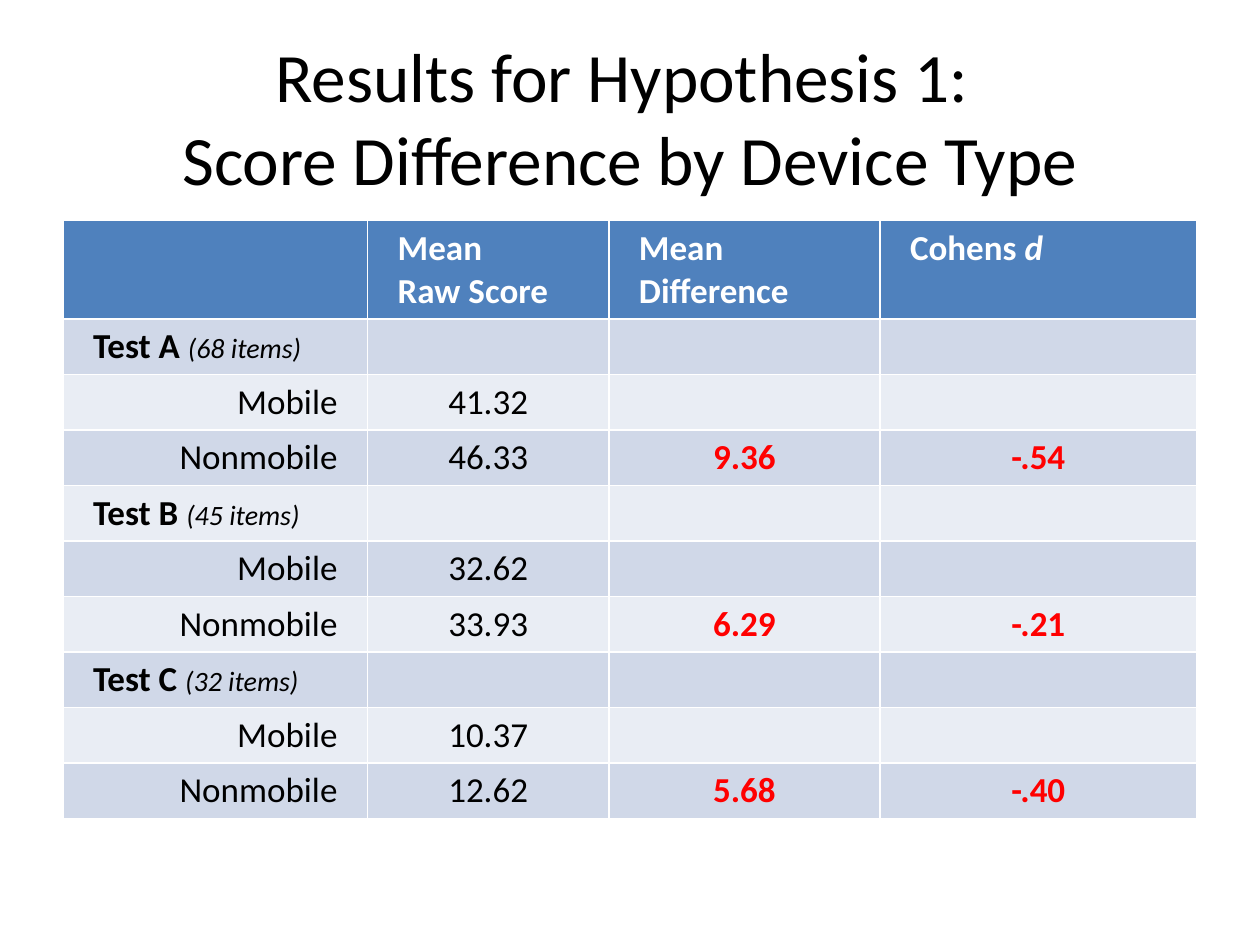
import pptx
import pptx.dml.color
import pptx.enum.text
import pptx.util

Pt = pptx.util.Pt
RGBColor = pptx.dml.color.RGBColor
ALIGN = pptx.enum.text.PP_ALIGN

BLACK = RGBColor(0x00, 0x00, 0x00)
WHITE = RGBColor(0xFF, 0xFF, 0xFF)
RED = RGBColor(0xFF, 0x00, 0x00)
HEADER_BLUE = RGBColor(0x4F, 0x81, 0xBD)
BANDS = (RGBColor(0xD0, 0xD8, 0xE8), RGBColor(0xE9, 0xED, 0xF4))

FONT = "Calibri"
COLUMN_WIDTHS = (174.1, 137.9, 154.9, 181.1)
HEADER_HEIGHT = 56
ROW_HEIGHT = 31.7

# Test name, items, mobile mean, nonmobile mean, mean difference, Cohens d
TESTS = (
    ("Test A", "(68 items)", "41.32", "46.33", "9.36", "-.54"),
    ("Test B", "(45 items)", "32.62", "33.93", "6.29", "-.21"),
    ("Test C", "(32 items)", "10.37", "12.62", "5.68", "-.40"),
)


def format_paragraph(paragraph, size, color, bold=False, align=ALIGN.LEFT):
    paragraph.alignment = align
    font = paragraph.font
    font.name, font.size, font.bold = FONT, Pt(size), bold
    font.color.rgb = color


def write_cell(cell, text, color=BLACK, bold=False, align=ALIGN.LEFT):
    cell.text = text
    for paragraph in cell.text_frame.paragraphs:
        format_paragraph(paragraph, 20, color, bold, align)


def add_italic_run(cell, text):
    run = cell.text_frame.paragraphs[0].add_run()
    run.text = text
    run.font.italic = True
    return run


def place_title(slide, left, top, width, height):
    title = slide.shapes.title
    title.left, title.top = Pt(left), Pt(top)
    title.width, title.height = Pt(width), Pt(height)
    frame = title.text_frame
    frame.text = "Results for Hypothesis 1: \vScore Difference by Device Type"
    frame.auto_size = pptx.enum.text.MSO_AUTO_SIZE.NONE
    frame.vertical_anchor = pptx.enum.text.MSO_ANCHOR.MIDDLE
    format_paragraph(frame.paragraphs[0], 39.6, BLACK, align=ALIGN.CENTER)


def fill_test(table, first_row, test):
    """Write one test: a heading row, then mobile and nonmobile rows."""
    name, items, mobile, nonmobile, difference, effect = test
    heading = table.cell(first_row, 0)
    write_cell(heading, name + " ", bold=True)
    run = add_italic_run(heading, items)
    run.font.size, run.font.bold = Pt(16), False

    devices = (("Mobile", mobile), ("Nonmobile", nonmobile))
    for row, (device, mean) in enumerate(devices, first_row + 1):
        write_cell(table.cell(row, 0), device, align=ALIGN.RIGHT)
        write_cell(table.cell(row, 1), mean, align=ALIGN.CENTER)
    for column, value in enumerate((difference, effect), 2):
        write_cell(table.cell(first_row + 2, column), value, RED, True, ALIGN.CENTER)


def add_results_table(slide, left, top, width):
    row_count = 1 + 3 * len(TESTS)
    height = HEADER_HEIGHT + ROW_HEIGHT * (row_count - 1)
    table = slide.shapes.add_table(
        row_count, len(COLUMN_WIDTHS), Pt(left), Pt(top), Pt(width), Pt(height)
    ).table
    for column, column_width in zip(table.columns, COLUMN_WIDTHS):
        column.width = Pt(column_width)
    for index, row in enumerate(table.rows):
        row.height = Pt(ROW_HEIGHT if index else HEADER_HEIGHT)
        for cell in row.cells:
            cell.margin_left = cell.margin_right = Pt(17.2)
            cell.fill.solid()
            cell.fill.fore_color.rgb = BANDS[(index - 1) % 2] if index else HEADER_BLUE

    headers = ("Mean\nRaw Score", "Mean Difference", "Cohens ")
    for column, header in enumerate(headers, 1):
        write_cell(table.cell(0, column), header, WHITE, bold=True)
    add_italic_run(table.cell(0, 3), "d")
    for index, test in enumerate(TESTS):
        fill_test(table, 1 + 3 * index, test)


def main():
    presentation = pptx.Presentation()
    presentation.slide_width, presentation.slide_height = Pt(720), Pt(540)
    slide = presentation.slides.add_slide(presentation.slide_layouts[5])
    place_title(slide, 36, 21.6, 648, 90)
    add_results_table(slide, 36, 126, sum(COLUMN_WIDTHS))
    presentation.save("out.pptx")


if __name__ == "__main__":
    main()
